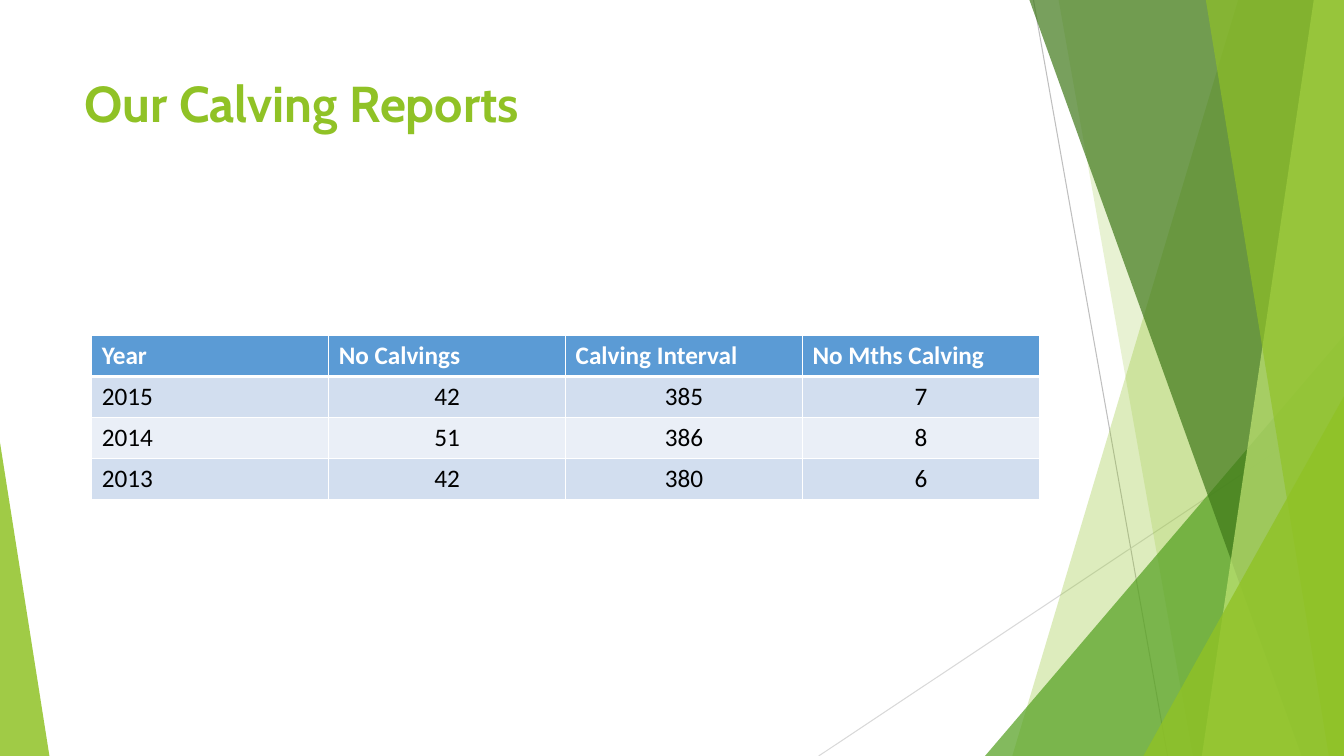
"""Build the calving reports slide with its faceted green backdrop and results table."""
from dataclasses import dataclass

from lxml.etree import SubElement
from pptx import Presentation
from pptx.dml.color import RGBColor
from pptx.enum.shapes import MSO_CONNECTOR as Connector
from pptx.enum.text import MSO_ANCHOR as Anchor, PP_ALIGN as Align
from pptx.oxml.ns import qn
from pptx.slide import Slide
from pptx.table import _Cell as Cell
from pptx.text.text import TextFrame
from pptx.util import Inches, Pt

Point = tuple[float, float]
WIDTH, HEIGHT = 13.33, 7.5


@dataclass(frozen=True)
class Theme:
    green: str = "90C226"
    mid_green: str = "54A021"
    dark_green: str = "3F7819"
    pale_green: str = "C0E474"
    header: str = "5B9BD5"
    bands: tuple[str, str] = ("D2DEEF", "EAEFF7")
    white: str = "FFFFFF"
    black: str = "000000"
    grey: str = "BFBFBF"
    light_grey: str = "D9D9D9"
    title_font: str = "Cabin"
    table_font: str = "Calibri"
    title_size: int = 36
    table_size: int = 18


THEME = Theme()


@dataclass(frozen=True)
class Facet:
    points: tuple[Point, ...]
    color: str
    opacity: int


@dataclass(frozen=True)
class Ray:
    start: Point
    end: Point
    color: str


def right_facet(top: Point, bottom: float, color: str, opacity: int) -> Facet:
    """Describe a facet bounded by a slanted left edge and the right slide edge."""
    corners = (top, (WIDTH, top[1]), (WIDTH, HEIGHT), (bottom, HEIGHT))
    return Facet(tuple(dict.fromkeys(corners)), color, opacity)


RAYS = (
    Ray((10.25, 0), (11.58, HEIGHT), THEME.grey),
    Ray((WIDTH, 4.03), (8.12, HEIGHT), THEME.light_grey),
)
FACETS = (
    right_facet((12.28, 0), 10.04, THEME.green, 30),
    right_facet((10.5, 0), 11.83, THEME.green, 20),
    right_facet((WIDTH, 3.33), 9.77, THEME.mid_green, 72),
    right_facet((10.21, 0), 12.91, THEME.dark_green, 70),
    right_facet((13.03, 0), 11.92, THEME.pale_green, 70),
    right_facet((11.96, 0), 13.18, THEME.green, 65),
    right_facet((WIDTH, 3.93), 11.34, THEME.green, 80),
    Facet(((0, HEIGHT), (0, 4.39), (0.49, HEIGHT)), THEME.green, 85),
)
REPORT = (
    ("Year", "No Calvings", "Calving Interval", "No Mths Calving"),
    ("2015", "42", "385", "7"),
    ("2014", "51", "386", "8"),
    ("2013", "42", "380", "6"),
)


def write_text(frame: TextFrame, text: str, *, font: str, size: int, color: str,
               bold: bool = False, align: Align = Align.LEFT) -> None:
    """Write one formatted paragraph into a text frame."""
    paragraph = frame.paragraphs[0]
    paragraph.alignment = align
    run = paragraph.add_run()
    run.text = text
    run.font.name = font
    run.font.size = Pt(size)
    run.font.bold = bold
    run.font.color.rgb = RGBColor.from_string(color)


def draw_ray(slide: Slide, ray: Ray) -> None:
    """Draw a thin straight line without a shadow."""
    ends = [Inches(value) for value in ray.start + ray.end]
    connector = slide.shapes.add_connector(Connector.STRAIGHT, *ends)
    connector.line.color.rgb = RGBColor.from_string(ray.color)
    connector.line.width = Pt(0.75)
    SubElement(connector._element.spPr, qn("a:effectLst"))


def draw_facet(slide: Slide, facet: Facet) -> None:
    """Draw a translucent polygon without an outline."""
    first, *others = [(Inches(x), Inches(y)) for x, y in facet.points]
    builder = slide.shapes.build_freeform(*first)
    builder.add_line_segments(others, close=True)
    shape = builder.convert_to_shape()
    shape.shadow.inherit = False
    shape.line.fill.background()
    shape.fill.solid()
    shape.fill.fore_color.rgb = RGBColor.from_string(facet.color)
    color = shape._element.spPr.find(qn("a:solidFill"))[0]
    SubElement(color, qn("a:alpha"), val=str(facet.opacity * 1000))


def set_borders(cell: Cell, **widths: int) -> None:
    """Give the cell white borders, with widths in points keyed by side letter."""
    properties = cell._tc.get_or_add_tcPr()
    for index, (side, width) in enumerate(widths.items()):
        line = SubElement(properties, qn(f"a:ln{side}"), w=str(Pt(width)))
        fill = SubElement(line, qn("a:solidFill"))
        SubElement(fill, qn("a:srgbClr"), val=THEME.white)
        properties.insert(index, line)


def draw_title(slide: Slide, text: str) -> None:
    """Place and format the title placeholder."""
    title = slide.shapes.title
    title.left, title.top = Inches(0.74), Inches(0.67)
    title.width, title.height = Inches(9.4), Inches(1.44)
    title.text_frame.vertical_anchor = Anchor.TOP
    write_text(title.text_frame, text, font=THEME.title_font,
               size=THEME.title_size, color=THEME.green, bold=True)


def draw_report(slide: Slide) -> None:
    """Draw the banded report table."""
    frame = slide.shapes.add_table(len(REPORT), len(REPORT[0]), Inches(0.91),
                                   Inches(3.33), Inches(9.4), Inches(1.62))
    for row, values in enumerate(REPORT):
        is_header = row == 0
        fill = THEME.header if is_header else THEME.bands[(row - 1) % 2]
        for column, value in enumerate(values):
            cell = frame.table.cell(row, column)
            cell.fill.solid()
            cell.fill.fore_color.rgb = RGBColor.from_string(fill)
            set_borders(cell, L=1, R=1, T=3 if row == 1 else 1, B=3 if is_header else 1)
            write_text(cell.text_frame, value, font=THEME.table_font,
                       size=THEME.table_size, bold=is_header,
                       color=THEME.white if is_header else THEME.black,
                       align=Align.LEFT if is_header or column == 0 else Align.CENTER)


def main() -> None:
    """Assemble and save the presentation."""
    presentation = Presentation()
    presentation.slide_width, presentation.slide_height = Inches(WIDTH), Inches(HEIGHT)
    slide = presentation.slides.add_slide(presentation.slide_layouts.get_by_name("Title Only"))
    for ray in RAYS:
        draw_ray(slide, ray)
    for facet in FACETS:
        draw_facet(slide, facet)
    draw_title(slide, "Our Calving Reports")
    draw_report(slide)
    presentation.save("out.pptx")


if __name__ == "__main__":
    main()
